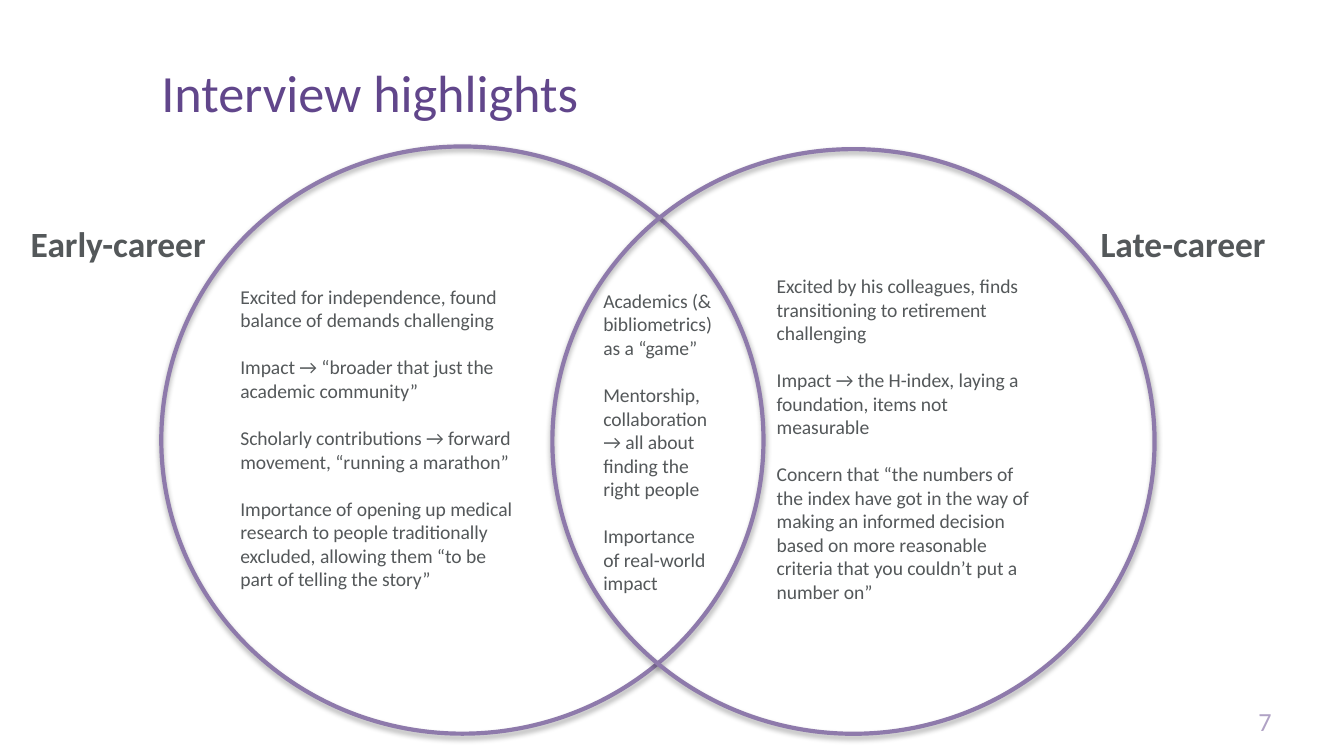
"""Build the interview highlights slide with its two-circle Venn diagram."""
from dataclasses import dataclass

from lxml import etree
from pptx import Presentation
from pptx.dml.color import RGBColor
from pptx.enum.shapes import MSO_SHAPE
from pptx.enum.text import MSO_ANCHOR, MSO_AUTO_SIZE, PP_ALIGN
from pptx.oxml.ns import qn
from pptx.slide import Slide
from pptx.util import Pt

CIRCLE = MSO_SHAPE.FLOWCHART_CONNECTOR
TOP, BOTTOM = MSO_ANCHOR.TOP, MSO_ANCHOR.BOTTOM
LEFT, RIGHT = PP_ALIGN.LEFT, PP_ALIGN.RIGHT
GROW, FIXED = MSO_AUTO_SIZE.SHAPE_TO_FIT_TEXT, MSO_AUTO_SIZE.NONE

FONT = "Calibri"
COLORS = {
    "title": "61468B",
    "ring": "8E7AAB",
    "body": "54585A",
    "number": "B0A2C5",
    "shadow": "000000",
}
BODY_GAP = 12.7
STYLES = {
    "title": {"size": Pt(28), "bold": False},
    "label": {"size": Pt(19), "bold": True},
    "body": {"size": Pt(10.5), "bold": False},
    "number": {"size": Pt(14), "bold": False},
}


@dataclass(frozen=True)
class Box:
    left: float
    top: float
    width: float
    height: float


@dataclass(frozen=True)
class TextBlock:
    box: Box
    paragraphs: tuple[str, ...]
    style: str
    color: str = "body"
    insets: tuple[float, float, float, float] = (7.2, 3.6, 7.2, 3.6)
    anchor: MSO_ANCHOR = TOP
    align: PP_ALIGN = LEFT
    line_spacing: float = 1.0
    auto_size: MSO_AUTO_SIZE = GROW


CIRCLES = (Box(86.4, 78.5, 322.6, 314.6), Box(295.9, 79.9, 322.6, 313.2))

TEXTS = (
    TextBlock(Box(653.8, 376.6, 27.4, 18), ("7",), "number", "number",
              (0, 0, 0, 0), BOTTOM, RIGHT, auto_size=FIXED),
    TextBlock(Box(86.4, 10.1, 565.2, 59.8), ("Interview highlights",), "title", "title",
              (0, 0, 7.2, 3.6), BOTTOM, line_spacing=0.9, auto_size=FIXED),
    TextBlock(Box(9.4, 115.2, 112.3, 30.2), ("Early-career",), "label"),
    TextBlock(Box(582.5, 115.2, 111.6, 30.2), ("Late-career",), "label"),
    TextBlock(Box(316.1, 151.2, 73.4, 198), (
        "Academics (& bibliometrics) as a “game”",
        "Mentorship, collaboration → all about finding the right people",
        "Importance of real-world impact",
    ), "body"),
    TextBlock(Box(121.7, 149, 165.6, 172.8), (
        "Excited for independence, found balance of demands challenging",
        "Impact → “broader that just the academic community”",
        "Scholarly contributions → forward movement, “running a marathon”",
        "Importance of opening up medical research to people traditionally excluded, "
        "allowing them “to be part of telling the story”",
    ), "body"),
    TextBlock(Box(409, 143.3, 152.6, 185), (
        "Excited by his colleagues, finds transitioning to retirement challenging",
        "Impact → the H-index, laying a foundation, items not measurable",
        "Concern that “the numbers of the index have got in the way of making an "
        "informed decision based on more reasonable criteria that you couldn’t put a "
        "number on”",
    ), "body"),
)


def place(box: Box) -> tuple[Pt, Pt, Pt, Pt]:
    """Return the box as lengths in points."""
    return Pt(box.left), Pt(box.top), Pt(box.width), Pt(box.height)


def add_circle(s: Slide, box: Box) -> None:
    """Draw an unfilled ring with a soft shadow below it."""
    sp = s.shapes.add_shape(CIRCLE, *place(box))
    sp.shadow.inherit = False
    sp.fill.background()
    sp.line.color.rgb = RGBColor.from_string(COLORS["ring"])
    sp.line.width = Pt(2.25)
    effects = sp._element.spPr.find(qn("a:effectLst"))
    shadow = etree.SubElement(effects, qn("a:outerShdw"), blurRad=str(Pt(3.1)),
                              dist=str(Pt(1.8)), dir="5400000", rotWithShape="0")
    color = etree.SubElement(shadow, qn("a:srgbClr"), val=COLORS["shadow"])
    etree.SubElement(color, qn("a:alpha"), val="35000")


def add_text(s: Slide, block: TextBlock) -> None:
    """Write a block of paragraphs in one text box."""
    tf = s.shapes.add_textbox(*place(block.box)).text_frame
    sides = ("margin_left", "margin_top", "margin_right", "margin_bottom")
    frame = {"word_wrap": True, "auto_size": block.auto_size,
             "vertical_anchor": block.anchor}
    frame.update(zip(sides, map(Pt, block.insets)))
    for name, value in frame.items():
        setattr(tf, name, value)
    for i, text in enumerate(block.paragraphs):
        p = tf.add_paragraph() if i else tf.paragraphs[0]
        p.alignment = block.align
        p.line_spacing = block.line_spacing
        if i:
            p.space_before = Pt(BODY_GAP)
        r = p.add_run()
        r.text = text
        for name, value in {"name": FONT, **STYLES[block.style]}.items():
            setattr(r.font, name, value)
        r.font.color.rgb = RGBColor.from_string(COLORS[block.color])


def main() -> None:
    """Build and save the slide."""
    prs = Presentation()
    prs.slide_width, prs.slide_height = Pt(720), Pt(405)
    s = prs.slides.add_slide(prs.slide_layouts[6])
    for box in CIRCLES:
        add_circle(s, box)
    for block in TEXTS:
        add_text(s, block)
    prs.save("out.pptx")


if __name__ == "__main__":
    main()
